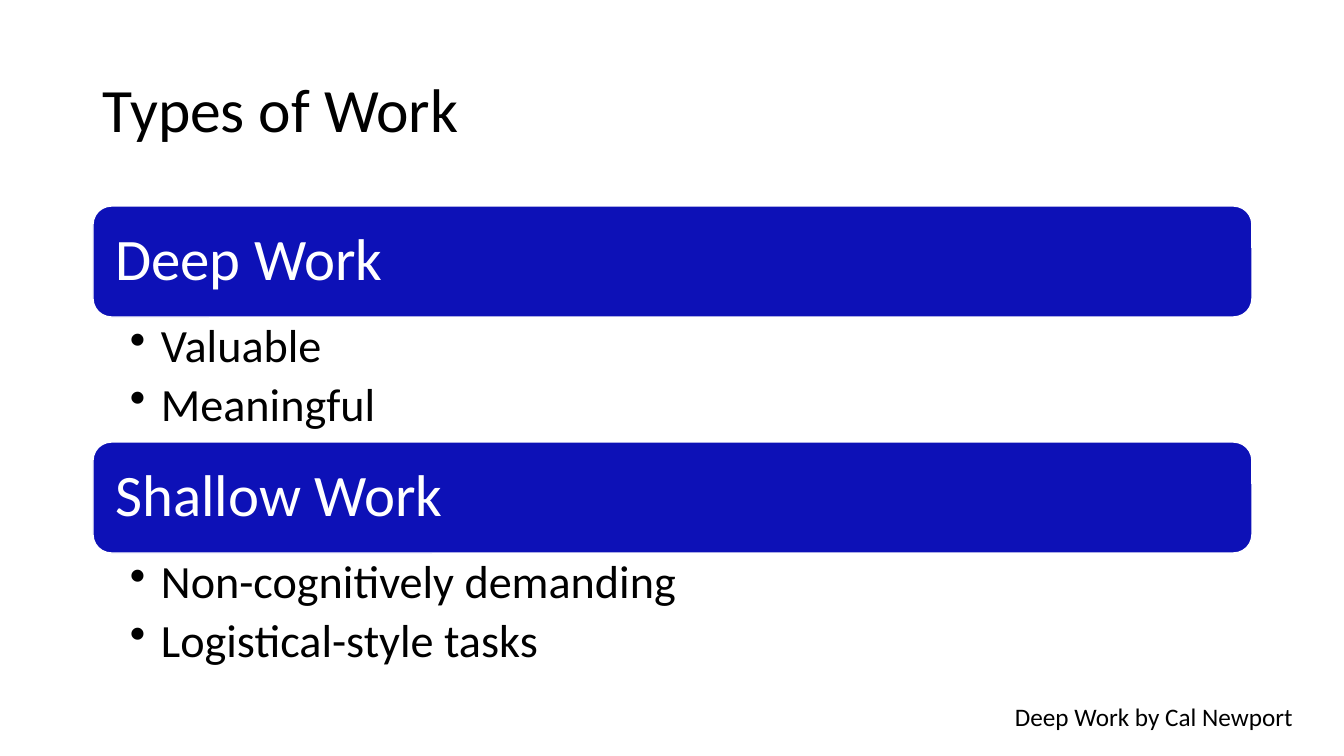
"""Build the "Types of Work" slide."""
from lxml import etree
from pptx import Presentation
from pptx.dml.color import RGBColor
from pptx.enum.shapes import MSO_SHAPE
from pptx.enum.text import MSO_ANCHOR, MSO_AUTO_SIZE, PP_ALIGN
from pptx.oxml.ns import qn
from pptx.util import Pt

TITLE = "Types of Work"
GROUPS = [
    ("Deep Work", ["Valuable", "Meaningful"]),
    ("Shallow Work", ["Non-cognitively demanding", "Logistical-style tasks"]),
]
SOURCE = "Deep Work by Cal Newport"

BLACK = RGBColor(0x00, 0x00, 0x00)
WHITE = RGBColor(0xFF, 0xFF, 0xFF)
BLUE = RGBColor(0x0D, 0x11, 0xB7)
FONT = "Calibri"
ROUND = MSO_SHAPE.ROUNDED_RECTANGLE
MIDDLE, TOP = MSO_ANCHOR.MIDDLE, MSO_ANCHOR.TOP
LEFT = PP_ALIGN.LEFT
NO_FIT, GROW = MSO_AUTO_SIZE.NONE, MSO_AUTO_SIZE.SHAPE_TO_FIT_TEXT

MARGIN, WIDTH = 93, 1159
FIRST_TOP, BAR_H, BODY_H = 206, 111, 125
BULLET_INDENT = 31


def px(n):
    return round(n * 914400 / 100.8)


def box(*lengths):
    return [px(n) for n in lengths]


def set_frame(tf, anchor, insets, wrap=True, fit=NO_FIT):
    tf.word_wrap = wrap
    tf.auto_size = fit
    tf.vertical_anchor = anchor
    tf.margin_left, tf.margin_top, tf.margin_right, tf.margin_bottom = box(*insets)


def add_bullet(p):
    pPr = p._p.get_or_add_pPr()
    pPr.set("marL", str(px(BULLET_INDENT)))
    pPr.set("indent", str(-px(BULLET_INDENT)))
    etree.SubElement(pPr, qn("a:buChar")).set("char", "•")


def write(p, text, size, color, spacing=0.9):
    p.alignment = LEFT
    p.line_spacing = spacing
    r = p.add_run()
    r.text = text
    r.font.name = FONT
    r.font.size = Pt(size)
    r.font.color.rgb = color


def add_group(shapes, top, heading, points):
    sp = shapes.add_shape(ROUND, *box(MARGIN, top, WIDTH, BAR_H))
    sp.shadow.inherit = False
    sp.fill.solid()
    sp.fill.fore_color.rgb = BLUE
    sp.line.color.rgb = WHITE
    sp.line.width = Pt(1)
    set_frame(sp.text_frame, MIDDLE, (17, 17, 17, 17))
    write(sp.text_frame.paragraphs[0], heading, 42, WHITE)

    tf = shapes.add_textbox(*box(MARGIN, top + BAR_H, WIDTH, BODY_H)).text_frame
    set_frame(tf, TOP, (37, 6, 33, 6))
    for i, point in enumerate(points):
        p = tf.add_paragraph() if i else tf.paragraphs[0]
        p.level = 1
        add_bullet(p)
        p.space_after = Pt(6)
        write(p, point, 33, BLACK)


def main():
    prs = Presentation()
    prs.slide_width, prs.slide_height = box(1344, 756)
    shapes = prs.slides.add_slide(prs.slide_layouts[5]).shapes

    title = shapes.title
    title.left, title.top, title.width, title.height = box(MARGIN, 40, WIDTH, 146)
    set_frame(title.text_frame, MIDDLE, (10, 5, 10, 5))
    write(title.text_frame.paragraphs[0], TITLE, 44, BLACK)

    for i, (heading, points) in enumerate(GROUPS):
        add_group(shapes, FIRST_TOP + i * (BAR_H + BODY_H), heading, points)

    tf = shapes.add_textbox(*box(1005, 696, 301, 41)).text_frame
    set_frame(tf, TOP, (10, 5, 10, 5), wrap=False, fit=GROW)
    write(tf.paragraphs[0], SOURCE, 18, BLACK, spacing=1.0)

    prs.save("out.pptx")


if __name__ == "__main__":
    main()
